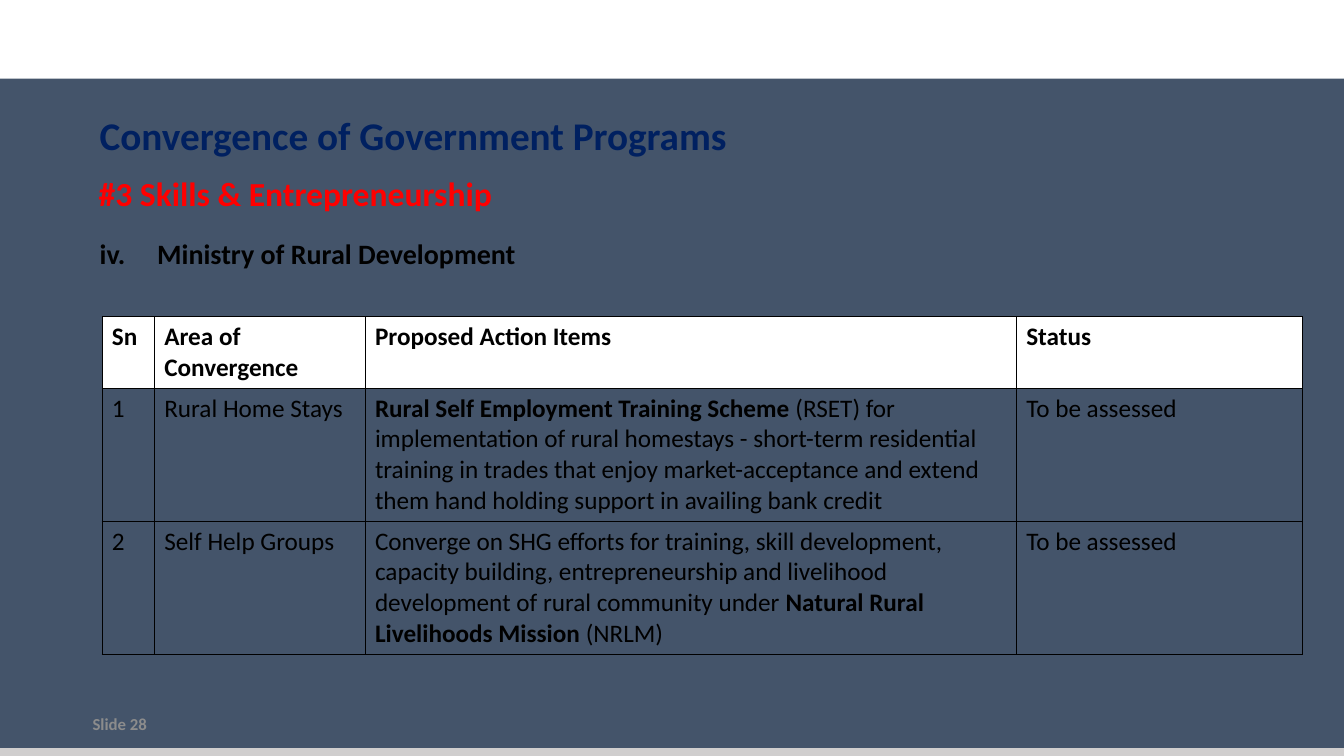
import pptx
import pptx.dml.color
import pptx.enum.shapes
import pptx.enum.text
import pptx.oxml.ns
import pptx.util
from lxml import etree
from pptx.util import Inches

COLORS = {
    "background": "44546A",
    "white": "FFFFFF",
    "rule": "D0CECE",
    "footer": "8C8C8C",
    "red": "FF0000",
    "navy": "002060",
    "black": "000000",
}
FONT = "Calibri"
COLUMN_WIDTHS = [0.52, 2.09, 6.46, 2.84]
ROW_HEIGHTS = [0.71, 1.32, 1.32]
HEADERS = ["Sn", "Area of Convergence", "Proposed Action Items", "Status"]
PROGRAMS = [
    (
        "Rural Home Stays",
        [
            ("Rural Self Employment Training Scheme ", True),
            ("(RSET) for implementation of rural homestays - short-term residential "
             "training in trades that enjoy market-acceptance and extend them hand "
             "holding support in availing bank credit", False),
        ],
        "To be assessed",
    ),
    (
        "Self Help Groups",
        [
            ("Converge on SHG efforts for training, skill development, capacity "
             "building, entrepreneurship and livelihood development of rural "
             "community under ", False),
            ("Natural Rural Livelihoods Mission ", True),
            ("(NRLM)", False),
        ],
        "To be assessed",
    ),
]


def color(name):
    return pptx.dml.color.RGBColor.from_string(COLORS[name])


def add_run(paragraph, text, size, color_name, bold):
    run = paragraph.add_run()
    run.text = text
    run.font.name = FONT
    run.font.size = pptx.util.Pt(size)
    run.font.bold = bold
    run.font.color.rgb = color(color_name)


def add_text(slide, left, top, width, height, text, size, color_name,
             anchor=pptx.enum.text.MSO_ANCHOR.MIDDLE):
    box = slide.shapes.add_textbox(Inches(left), Inches(top), Inches(width), Inches(height))
    box.text_frame.word_wrap = True
    box.text_frame.vertical_anchor = anchor
    paragraph = box.text_frame.paragraphs[0]
    add_run(paragraph, text, size, color_name, True)
    return paragraph


def set_hanging_indent(paragraph, indent):
    properties = paragraph._p.get_or_add_pPr()
    properties.set("marL", str(Inches(indent)))
    properties.set("indent", str(-Inches(indent)))


def add_header_band(slide, width):
    band = slide.shapes.add_shape(
        pptx.enum.shapes.MSO_SHAPE.RECTANGLE, 0, 0, width, Inches(0.78))
    band.shadow.inherit = False
    band.fill.solid()
    band.fill.fore_color.rgb = color("white")
    band.line.fill.background()


def add_bottom_rule(slide, width):
    rule = slide.shapes.add_connector(
        pptx.enum.shapes.MSO_CONNECTOR.STRAIGHT, 0, Inches(7.46), width, Inches(7.46))
    rule.line.color.rgb = color("rule")
    rule.line.width = pptx.util.Pt(6)
    etree.SubElement(rule._element.spPr, pptx.oxml.ns.qn("a:effectLst"))


def set_borders(cell):
    properties = cell._tc.get_or_add_tcPr()
    for side in ("L", "R", "T", "B"):
        border = etree.SubElement(
            properties, pptx.oxml.ns.qn(f"a:ln{side}"), w=str(pptx.util.Pt(0.25)))
        fill = etree.SubElement(border, pptx.oxml.ns.qn("a:solidFill"))
        etree.SubElement(fill, pptx.oxml.ns.qn("a:srgbClr"), val=COLORS["black"])


def fill_cell(cell, runs, is_header):
    set_borders(cell)
    if is_header:
        cell.fill.solid()
        cell.fill.fore_color.rgb = color("white")
    else:
        cell.fill.background()
    for text, bold in runs:
        add_run(cell.text_frame.paragraphs[0], text, 18, "black", bold)


def add_program_table(slide):
    rows = [[[(header, True)] for header in HEADERS]]
    for number, (area, actions, status) in enumerate(PROGRAMS, 1):
        rows.append([[(str(number), False)], [(area, False)], actions, [(status, False)]])
    table = slide.shapes.add_table(
        len(rows), len(HEADERS), Inches(1.01), Inches(3.14),
        Inches(sum(COLUMN_WIDTHS)), Inches(sum(ROW_HEIGHTS))).table
    table.horz_banding = False
    for column, width in zip(table.columns, COLUMN_WIDTHS):
        column.width = Inches(width)
    for row, height in zip(table.rows, ROW_HEIGHTS):
        row.height = Inches(height)
    for row_index, row in enumerate(rows):
        for column_index, runs in enumerate(row):
            fill_cell(table.cell(row_index, column_index), runs, row_index == 0)


def main():
    presentation = pptx.Presentation()
    presentation.slide_width = Inches(13.33)
    presentation.slide_height = Inches(7.5)
    slide = presentation.slides.add_slide(presentation.slide_layouts[6])
    slide.background.fill.solid()
    slide.background.fill.fore_color.rgb = color("background")

    add_header_band(slide, presentation.slide_width)
    add_bottom_rule(slide, presentation.slide_width)
    add_text(slide, 0.82, 7.05, 3, 0.27, "Slide 28", 12, "footer")
    add_text(slide, 0.88, 1.65, 11.8, 0.54, "#3 Skills & Entrepreneurship", 24, "red")
    add_text(slide, 0.89, 1.01, 8.32, 0.65, "Convergence of Government Programs", 28, "navy")
    ministry = add_text(slide, 0.89, 2.3, 11.8, 0.54, "iv.\tMinistry of Rural Development",
                        20, "black", pptx.enum.text.MSO_ANCHOR.TOP)
    set_hanging_indent(ministry, 0.57)
    add_program_table(slide)
    presentation.save("out.pptx")


if __name__ == "__main__":
    main()
